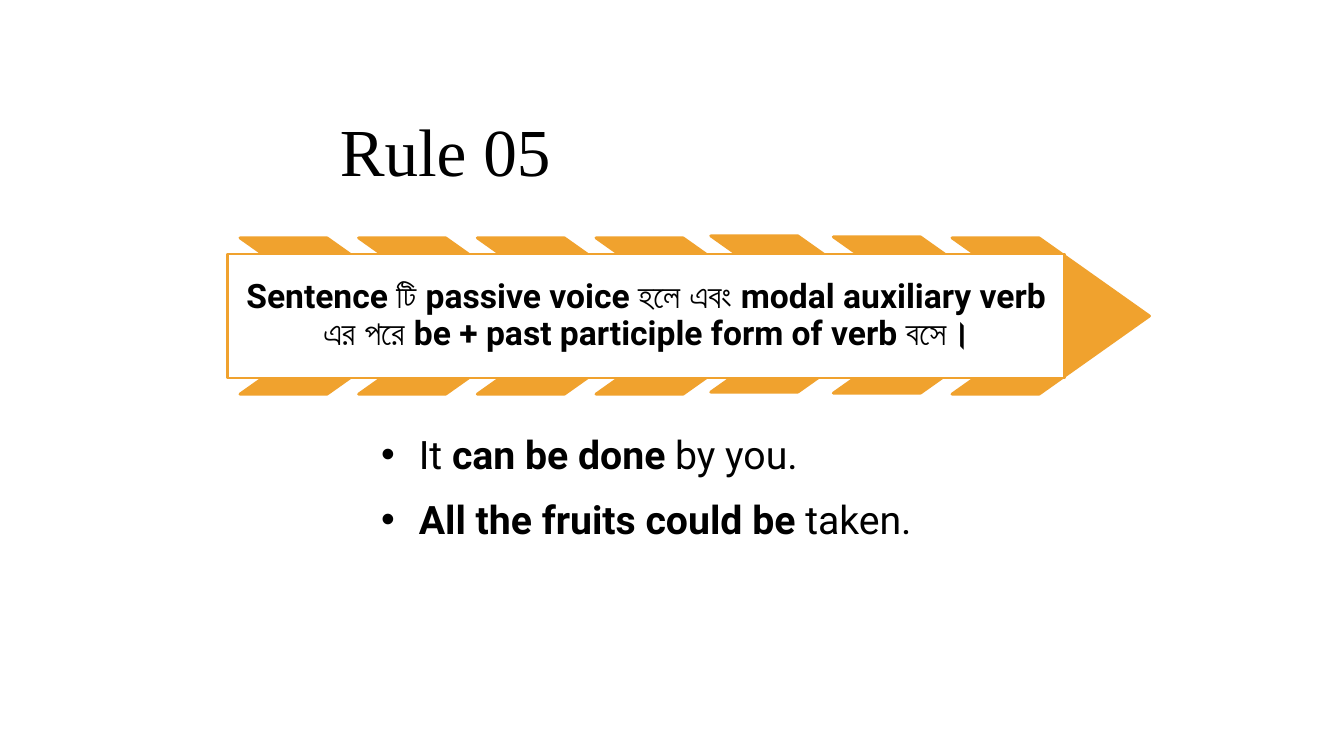
import pptx
import pptx.dml.color
import pptx.enum.shapes
import pptx.enum.text
import pptx.util

SHAPES = pptx.enum.shapes.MSO_SHAPE
ANCHOR = pptx.enum.text.MSO_ANCHOR
ALIGN = pptx.enum.text.PP_ALIGN


def color(hex_string):
    """Turn a hex string into a colour."""
    return pptx.dml.color.RGBColor.from_string(hex_string)


def write(paragraph, text, font="Roboto", size=28, bold=False, fill="000000"):
    """Add one formatted run to a paragraph."""
    run = paragraph.add_run()
    run.text = text
    run.font.name = font
    run.font.size = pptx.util.Pt(size)
    run.font.bold = bold
    run.font.color.rgb = color(fill)


class RuleSlide:
    """Hold the style and the current slide; lengths are percent of the slide."""

    accent = "F0A22E"
    paper = "FFFFFF"

    def __init__(self, presentation):
        """Add a title and content slide."""
        self.width = presentation.slide_width
        self.height = presentation.slide_height
        self.slide = presentation.slides.add_slide(presentation.slide_layouts[1])

    def box(self, left, top, width, height):
        """Convert percentages to slide lengths."""
        return (int(self.width * left / 100), int(self.height * top / 100),
                int(self.width * width / 100), int(self.height * height / 100))

    def frame(self, shape, anchor, horizontal, vertical):
        """Set wrapping, anchor and margins of a text frame."""
        frame = shape.text_frame
        frame.word_wrap = True
        frame.auto_size = pptx.enum.text.MSO_AUTO_SIZE.NONE
        frame.vertical_anchor = anchor
        frame.margin_left = frame.margin_right = pptx.util.Inches(horizontal)
        frame.margin_top = frame.margin_bottom = pptx.util.Inches(vertical)
        return frame

    def place(self, shape, area):
        """Move a placeholder to an area."""
        shape.left, shape.top, shape.width, shape.height = self.box(*area)

    def title(self, text, area):
        """Fill the title placeholder."""
        shape = self.slide.shapes.title
        self.place(shape, area)
        paragraph = self.frame(shape, ANCHOR.BOTTOM, 0.2, 0.2).paragraphs[0]
        paragraph.alignment = ALIGN.LEFT
        paragraph.line_spacing = 0.9
        write(paragraph, text, font="Times New Roman", size=48)

    def shape(self, kind, area, fill):
        """Add a preset shape with the accent outline."""
        shape = self.slide.shapes.add_shape(kind, *self.box(*area))
        shape.shadow.inherit = False
        shape.fill.solid()
        shape.fill.fore_color.rgb = color(fill)
        shape.line.color.rgb = color(self.accent)
        shape.line.width = pptx.util.Pt(2)
        return shape

    def chevron(self, area):
        """Add one link of the arrow band."""
        self.shape(SHAPES.CHEVRON, area, self.accent).adjustments[0] = 0.706

    def banner(self, text, area):
        """Add the outlined panel with the rule."""
        shape = self.shape(SHAPES.RECTANGLE, area, self.paper)
        paragraph = self.frame(shape, ANCHOR.MIDDLE, 0.07, 0.07).paragraphs[0]
        paragraph.alignment = ALIGN.CENTER
        paragraph.line_spacing = 0.9
        write(paragraph, text, size=24, bold=True)

    def bullets(self, items, area):
        """Fill the body placeholder with lists of (text, bold) parts."""
        shape = self.slide.placeholders[1]
        self.place(shape, area)
        frame = self.frame(shape, ANCHOR.TOP, 0.1, 0.05)
        for index, parts in enumerate(items):
            paragraph = frame.add_paragraph() if index else frame.paragraphs[0]
            paragraph.line_spacing = 1.15
            paragraph.space_before = pptx.util.Pt(0)
            paragraph.space_after = pptx.util.Pt(8)
            for text, bold in parts:
                write(paragraph, text, bold=bold)


def main():
    """Build and save the slide."""
    presentation = pptx.Presentation()
    presentation.slide_width = pptx.util.Inches(13.33)
    presentation.slide_height = pptx.util.Inches(7.5)
    rule = RuleSlide(presentation)
    rule.title("Rule 05", (23.78, 17.87, 62.7, 10.13))
    nudges = {4: (-0.29, -0.27), 5: (0, -0.13)}
    for index in range(7):
        across, down = nudges.get(index, (0, 0))
        rule.chevron((17.85 + 8.83 * index + across, 31.47 + down, 14.7, 20.67))
    rule.banner("Sentence টি passive voice হলে এবং modal auxiliary verb "
                "এর পরে be + past participle form of verb বসে।",
                (16.95, 33.6, 62.25, 16.4))
    rule.bullets([
        [("It ", False), ("can be done ", True), ("by you.", False)],
        [("All the fruits could be ", True), ("taken.", False)],
    ], (27.6, 55.33, 43.05, 17.07))
    presentation.save("out.pptx")


if __name__ == "__main__":
    main()
